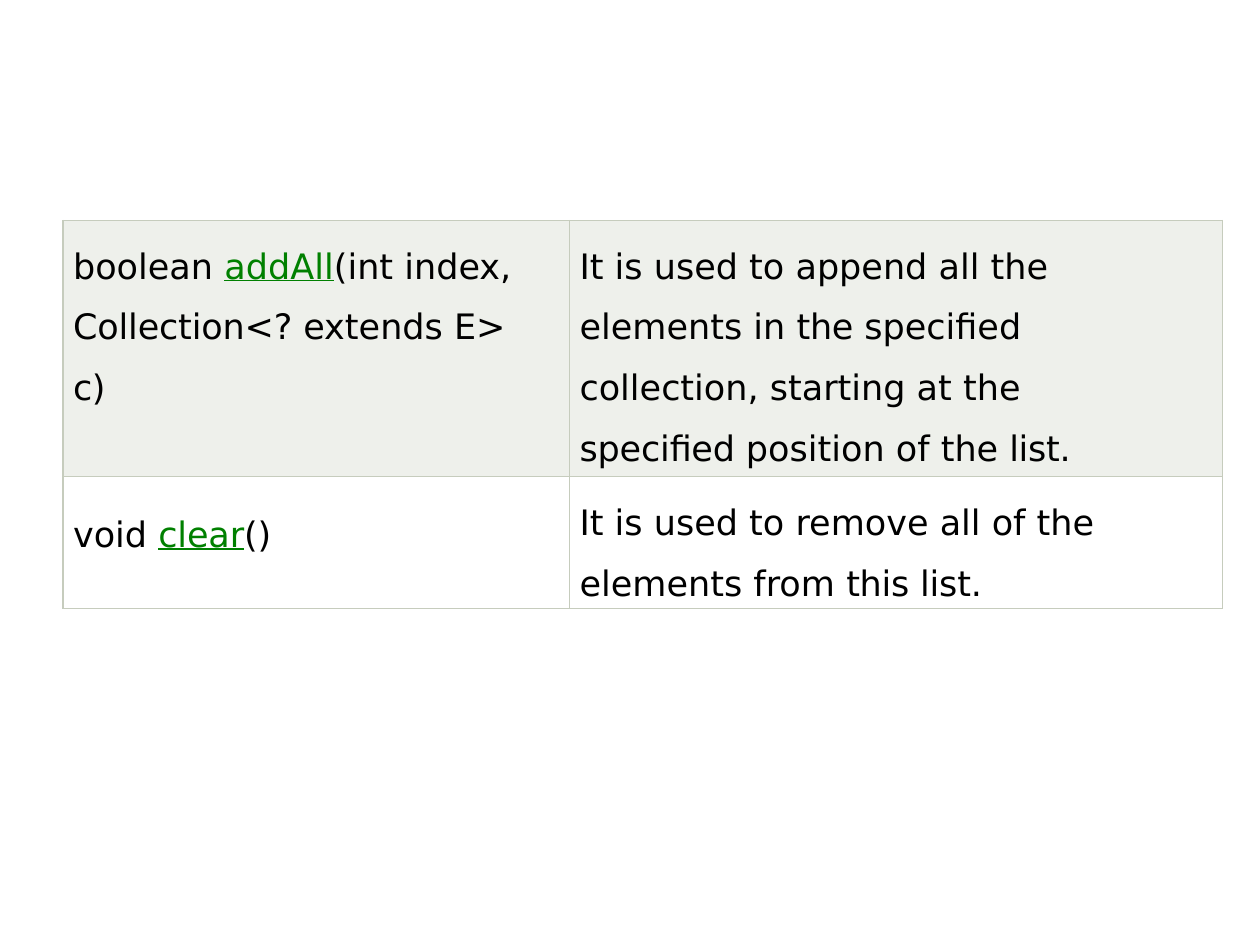
from lxml import etree
from pptx import Presentation
from pptx.dml.color import RGBColor
from pptx.oxml.ns import qn
from pptx.util import Inches, Pt

FONT = "DejaVu Sans"
BLACK, GREEN, BORDER, SHADE = "000000", "008000", "C6CCBD", "EEF0EB"
BORDER_WIDTH = Pt(0.75)

LEFT, TOP = 0.5, 1.75
COLUMN_WIDTHS = [0.89, 3.08, 0.05, 5.18]
SIGNATURE_END, DESCRIPTION = 2, 3  # the signature spans the first three columns
RIGHT_MARGINS = [0.3, 0.5]

# Each cell holds its top margin, line spacing and runs:
# (text, is method name, character spacing in hundredths of a point).
ROWS = [
    {"height": 2.03, "fill": SHADE, "cells": [
        (0.05, 1.49, [("boolean ", False, 0), ("addAll", True, 0),
                      ("(int index, ", False, 0), ("Collection<? ", False, -10),
                      ("extends E> ", False, 0), ("c)", False, -20)]),
        (0.05, 1.49, [("It is used to append all the elements in ", False, 0),
                      ("the ", False, -20),
                      ("specified collection, starting at the ", False, 0),
                      ("specified ", False, -10), ("position of the", False, 0),
                      (" list.", False, -20)]),
    ]},
    {"height": 1.05, "fill": None, "cells": [
        (0.31, 1.0, [("void ", False, 0), ("clear", True, -10), ("()", False, -10)]),
        (0.05, 1.5, [("It is used to remove all of the elements from ", False, 0),
                     ("this ", False, -20), ("list.", False, -10)]),
    ]},
]


def color(value):
    return RGBColor.from_string(value)


def add_borders(cell):
    properties = cell._tc.get_or_add_tcPr()
    for position, side in enumerate(("lnL", "lnR", "lnT", "lnB")):
        line = etree.Element(qn(f"a:{side}"), w=str(BORDER_WIDTH))
        fill = etree.SubElement(line, qn("a:solidFill"))
        etree.SubElement(fill, qn("a:srgbClr"), val=BORDER)
        properties.insert(position, line)


def fill_cell(cell, fill, right_margin, top_margin, line_spacing, runs):
    cell.margin_left, cell.margin_right = Inches(0.08), Inches(right_margin)
    cell.margin_top, cell.margin_bottom = Inches(top_margin), 0
    if fill:
        cell.fill.solid()
        cell.fill.fore_color.rgb = color(fill)
    else:
        cell.fill.background()
    add_borders(cell)
    paragraph = cell.text_frame.paragraphs[0]
    paragraph.line_spacing = line_spacing
    for text, is_method, spacing in runs:
        run = paragraph.add_run()
        run.text = text
        run.font.name = FONT
        run.font.size = Pt(20)
        run.font.bold = False
        run.font.underline = is_method
        run.font.color.rgb = color(GREEN if is_method else BLACK)
        run._r.get_or_add_rPr().set("spc", str(spacing))


presentation = Presentation()
presentation.slide_width, presentation.slide_height = Inches(10), Inches(7.5)
slide = presentation.slides.add_slide(presentation.slide_layouts[6])

table = slide.shapes.add_table(
    len(ROWS), len(COLUMN_WIDTHS), Inches(LEFT), Inches(TOP),
    Inches(sum(COLUMN_WIDTHS)), Inches(sum(row["height"] for row in ROWS))).table
table.first_row = table.horz_banding = False
for column, width in zip(table.columns, COLUMN_WIDTHS):
    column.width = Inches(width)
for index, row in enumerate(ROWS):
    table.rows[index].height = Inches(row["height"])
    signature, description = table.cell(index, 0), table.cell(index, DESCRIPTION)
    signature.merge(table.cell(index, SIGNATURE_END))
    for cell, right_margin, content in zip((signature, description), RIGHT_MARGINS,
                                           row["cells"]):
        fill_cell(cell, row["fill"], right_margin, *content)

presentation.save("out.pptx")
